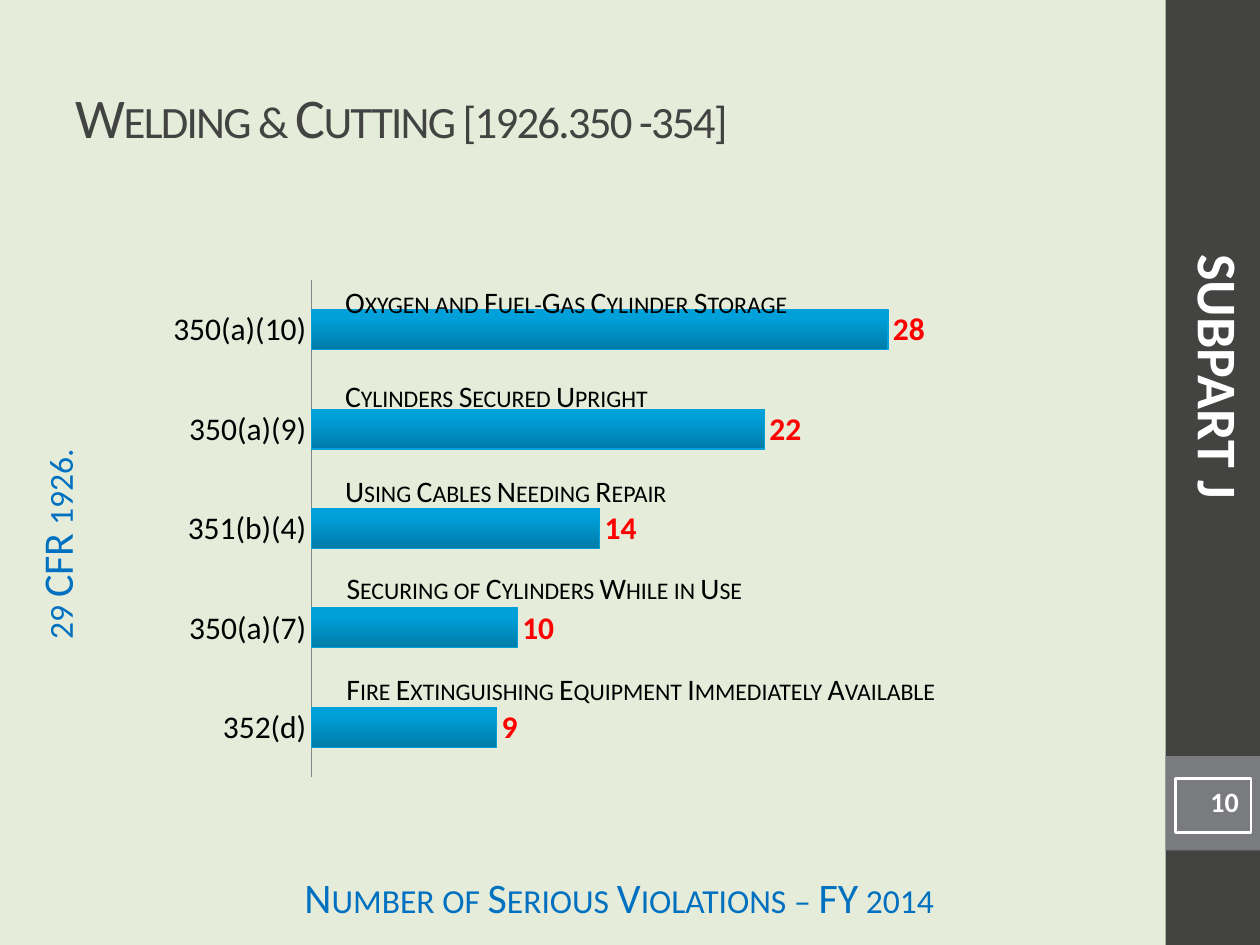
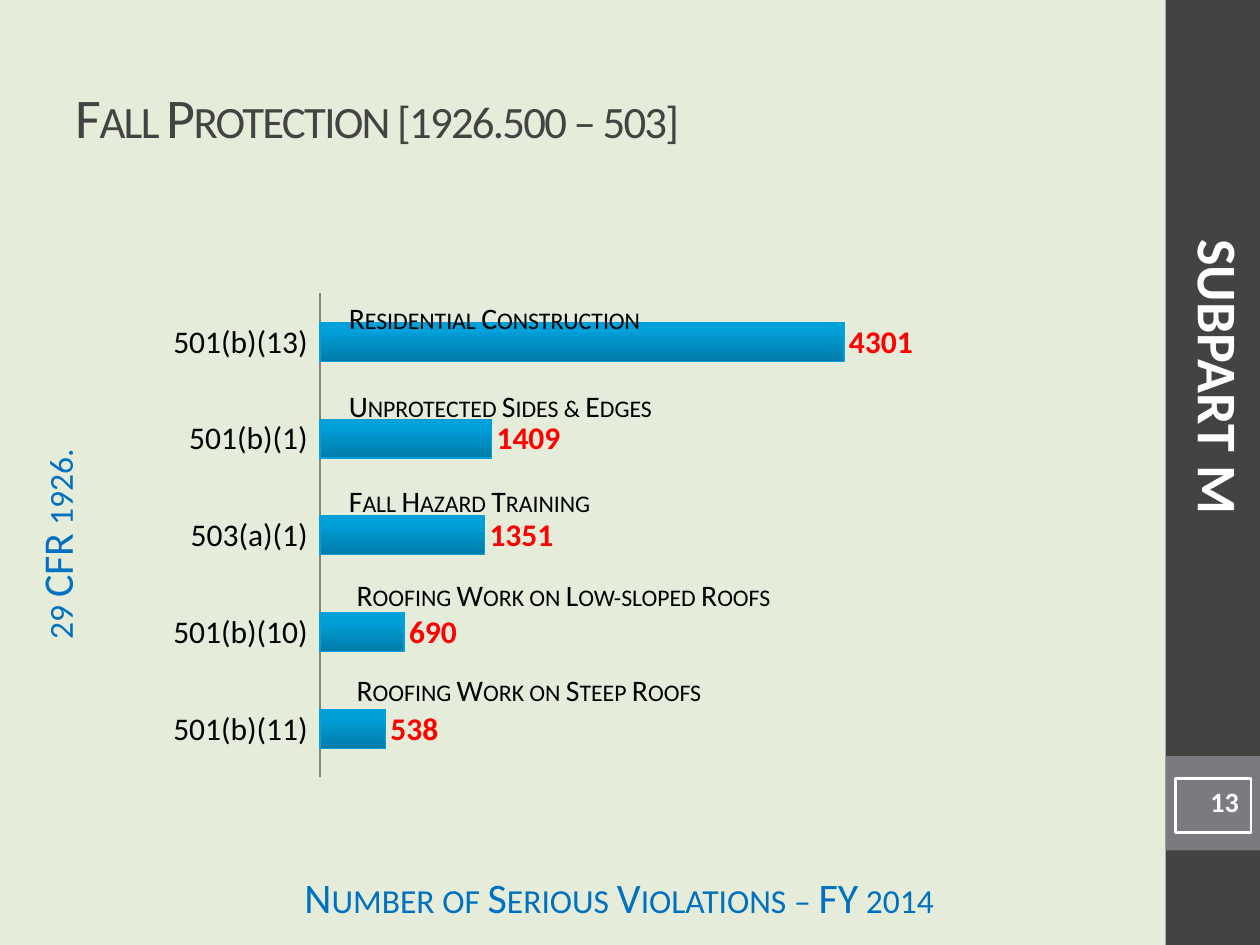
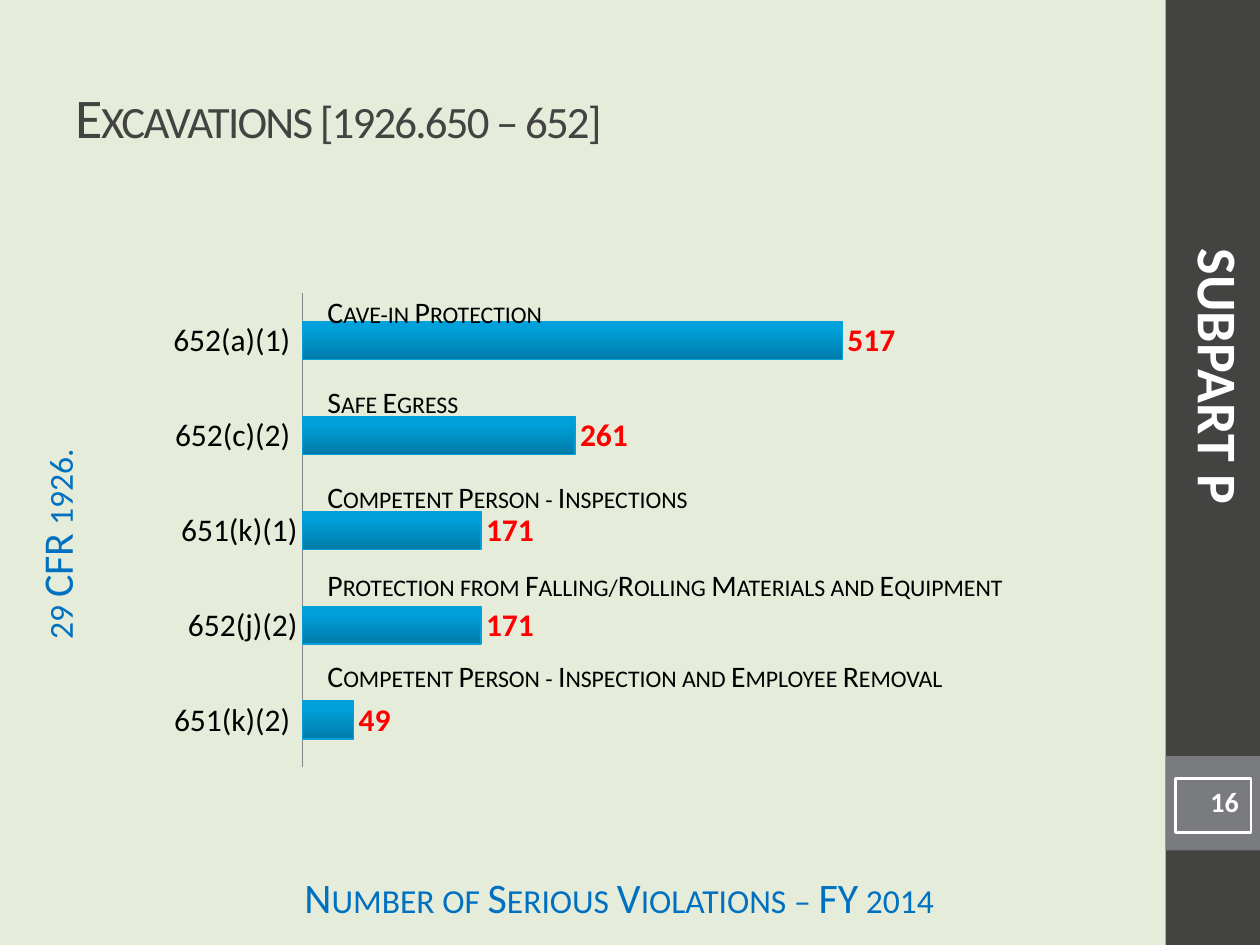
from copy import deepcopy
from dataclasses import dataclass

from pptx import Presentation, util as u
from pptx.chart import data as chart_data
from pptx.dml import color
from pptx.enum import chart as ch, shapes, text


@dataclass(frozen=True)
class Theme:
    font: str = "Calibri"
    page: str = "E5ECD9"
    band: str = "434342"
    tab: str = "797B7E"
    white: str = "FFFFFF"
    ink: str = "000000"
    note: str = "0070C0"
    count: str = "FF0000"
    axis: str = "868686"
    bar_edge: str = "03A0D9"
    bar_stops: tuple = ((0, "007BA8"), (0.8, "00A0DA"), (1, "00A0DB"))
    heading_size: int = 32
    note_size: int = 24
    chart_size: int = 18
    caption_size: int = 17
    number_size: int = 16


@dataclass(frozen=True)
class Box:
    left: float
    top: float
    width: float
    height: float

    def inner(self, dx, dy, width, height):
        return Box(self.left + dx, self.top + dy, width, height)

    def inches(self):
        return [u.Inches(round(n, 2)) for n in (self.left, self.top, self.width, self.height)]


@dataclass(frozen=True)
class Violation:
    citation: str
    count: int
    caption: str
    dx: float
    dy: float
    width: float
    height: float = 0.39
    tight: bool = False


@dataclass(frozen=True)
class Subpart:
    letter: str
    title: str
    number: int
    chart_box: Box
    axis_max: int
    violations: tuple


THEME = Theme()
TITLE_BOX = Box(0.5, 0.3, 8.33, 1.25)
BAND_BOX = Box(9.25, 0, 0.75, 7.5)
FOOTER_BOX = Box(2.08, 6.92, 5.67, 0.33)
CFR_BOX = Box(-1.56, 4.03, 4.19, 0.58)
NORMAL_INSETS = (0.1, 0.05, 0.1, 0.05)
NOTE_INSETS = (0.1, 0, 0.1, 0.05)
NO_INSETS = (0, 0, 0, 0)

SUBPARTS = (
    Subpart("J", "Welding & Cutting [1926.350 -354]", 10, Box(1.25, 2.14, 6.25, 4.11), 30, (
        Violation("350(a)(10)", 28, "Oxygen and Fuel-Gas Cylinder Storage", 1.39, 0.06, 3.78),
        Violation("350(a)(9)", 22, "Cylinders Secured Upright", 1.39, 0.81, 2.7),
        Violation("351(b)(4)", 14, "Using Cables Needing Repair", 1.39, 1.56, 2.81),
        Violation("350(a)(7)", 10, "Securing of Cylinders While in Use", 1.5, 2.38, 4.42, tight=True),
        Violation("352(d)", 9, "Fire Extinguishing Equipment Immediately Available",
                  1.5, 3.18, 5.34, 0.29, True),
    )),
    Subpart("M", "Fall Protection [1926.500 – 503]", 13, Box(1.25, 2.25, 6.25, 4), 5000, (
        Violation("501(b)(13) ", 4301, "Residential Construction", 1.42, 0.08, 2.56),
        Violation("501(b)(1) ", 1409, "Unprotected Sides & Edges", 1.42, 0.78, 2.7),
        Violation("503(a)(1) ", 1351, "Fall Hazard Training", 1.42, 1.53, 2.15),
        Violation("501(b)(10) ", 690, "Roofing Work on Low-sloped Roofs", 1.58, 2.33, 3.59, 0.26, True),
        Violation("501(b)(11) ", 538, "Roofing Work on Steep Roofs", 1.58, 3.08, 5.42, 0.29, True),
    )),
    Subpart("P", "Excavations [1926.650 – 652]", 16, Box(1.25, 2.25, 6.25, 3.92), 600, (
        Violation("652(a)(1) ", 517, "Cave-in Protection", 1.25, 0.03, 1.98),
        Violation("652(c)(2) ", 261, "Safe Egress", 1.25, 0.75, 1.28),
        Violation("651(k)(1)", 171, "Competent Person - Inspections", 1.25, 1.5, 3.14),
        Violation("652(j)(2)", 171, "Protection from Falling/Rolling Materials and Equipment",
                  1.25, 2.2, 5.65),
        Violation("651(k)(2) ", 49, "Competent Person - Inspection and Employee Removal",
                  1.25, 2.92, 5.22),
    )),
)


def rgb(value):
    return color.RGBColor.from_string(value)


def style_font(font, size, ink, bold=False):
    font.name = THEME.font
    font.size = u.Pt(size)
    font.bold = bold
    font.color.rgb = rgb(ink)


def write(frame, words, size, ink, bold=False, align=text.PP_ALIGN.LEFT, insets=NORMAL_INSETS,
          wrap=True, grow=False, anchor=text.MSO_ANCHOR.TOP, small_caps=False, spacing=None):
    frame.text = words
    frame.word_wrap = wrap
    frame.auto_size = text.MSO_AUTO_SIZE.SHAPE_TO_FIT_TEXT if grow else text.MSO_AUTO_SIZE.NONE
    frame.vertical_anchor = anchor
    (frame.margin_left, frame.margin_top,
     frame.margin_right, frame.margin_bottom) = map(u.Inches, insets)
    paragraph = frame.paragraphs[0]
    paragraph.alignment = align
    style_font(paragraph.font, size, ink, bold)
    if small_caps:
        paragraph.font._element.set("cap", "small")
    if spacing is not None:
        paragraph.font._element.set("spc", str(spacing))


def add_label(slide, box, words, size, ink, rotation=0, **options):
    label = slide.shapes.add_textbox(*box.inches())
    label.rotation = rotation
    write(label.text_frame, words, size, ink, **options)


def add_panel(slide, box, fill=None, edge=None):
    panel = slide.shapes.add_shape(shapes.MSO_SHAPE.RECTANGLE, *box.inches())
    panel.shadow.inherit = False
    if fill:
        panel.fill.solid()
        panel.fill.fore_color.rgb = rgb(fill)
    else:
        panel.fill.background()
    if edge:
        panel.line.color.rgb = rgb(edge)
        panel.line.width = u.Pt(1.5)
    else:
        panel.line.fill.background()
    return panel


def add_title(slide, box, words):
    title = slide.shapes.title
    title.left, title.top, title.width, title.height = box.inches()
    write(title.text_frame, words, THEME.heading_size, THEME.band,
          anchor=text.MSO_ANCHOR.MIDDLE, small_caps=True, spacing=-100)


def add_band(slide, box, subpart):
    add_panel(slide, box, fill=THEME.band)
    add_panel(slide, box.inner(0, 6, box.width, 0.75), fill=THEME.tab)
    number = add_panel(slide, box.inner(0.08, 6.18, 0.6, 0.43), edge=THEME.white)
    write(number.text_frame, str(subpart.number), THEME.number_size, THEME.white,
          bold=True, align=text.PP_ALIGN.RIGHT)
    add_label(slide, box.inner(-2.56, 2.67, 5.98, 0.64), f"SUBPART {subpart.letter}",
              THEME.heading_size, THEME.white, rotation=90, bold=True, grow=True,
              align=text.PP_ALIGN.CENTER)


def add_axis_notes(slide, footer_box, cfr_box):
    for box, words, rotation in (
        (footer_box, "Number of Serious Violations – FY 2014", 0),
        (cfr_box, "29 CFR 1926.", 270),
    ):
        add_label(slide, box, words, THEME.note_size, THEME.note, rotation,
                  align=text.PP_ALIGN.CENTER, insets=NOTE_INSETS, small_caps=True)


def style_bars(series):
    series.invert_if_negative = False
    fill = series.format.fill
    fill.gradient()
    fill.gradient_angle = 90
    stop_list = series._element.xpath(".//a:gsLst")[0]
    stop_list.append(deepcopy(stop_list[-1]))
    for stop, (position, shade) in zip(fill.gradient_stops, THEME.bar_stops):
        stop.position = position
        stop.color.rgb = rgb(shade)
    series.format.line.color.rgb = rgb(THEME.bar_edge)
    series.format.line.width = u.Pt(0.75)


def add_violation_chart(slide, box, subpart):
    bottom_up = subpart.violations[::-1]
    counts = chart_data.CategoryChartData()
    counts.categories = [violation.citation for violation in bottom_up]
    counts.add_series("Series 1", [violation.count for violation in bottom_up])
    chart = slide.shapes.add_chart(ch.XL_CHART_TYPE.BAR_CLUSTERED, *box.inches(), counts).chart
    chart.has_legend = False
    chart.has_title = False
    style_font(chart.font, 10, THEME.ink)

    citations = chart.category_axis
    citations.major_tick_mark = citations.minor_tick_mark = ch.XL_TICK_MARK.NONE
    citations.has_major_gridlines = False
    citations.format.line.color.rgb = rgb(THEME.axis)
    citations.format.line.width = u.Pt(0.75)
    style_font(citations.tick_labels.font, THEME.chart_size, THEME.ink)

    scale = chart.value_axis
    scale.minimum_scale, scale.maximum_scale = 0, subpart.axis_max
    scale.has_major_gridlines = False
    scale.visible = False

    bars = chart.plots[0]
    bars.vary_by_categories = False
    bars.gap_width = 150
    bars.overlap = -25
    bars.has_data_labels = True
    bars.data_labels.show_value = True
    bars.data_labels.position = ch.XL_LABEL_POSITION.OUTSIDE_END
    style_font(bars.data_labels.font, THEME.chart_size, THEME.count, bold=True)
    style_bars(bars.series[0])


def add_captions(slide, box, violations):
    for item in violations:
        add_label(slide, box.inner(item.dx, item.dy, item.width, item.height), item.caption,
                  THEME.caption_size, THEME.ink, small_caps=True, wrap=item.tight,
                  grow=not item.tight, insets=NO_INSETS if item.tight else NORMAL_INSETS)


def add_subpart_slide(deck, subpart):
    slide = deck.slides.add_slide(deck.slide_layouts[5])
    add_band(slide, BAND_BOX, subpart)
    add_axis_notes(slide, FOOTER_BOX, CFR_BOX)
    add_violation_chart(slide, subpart.chart_box, subpart)
    add_title(slide, TITLE_BOX, subpart.title)
    add_captions(slide, subpart.chart_box, subpart.violations)


def main():
    deck = Presentation()
    deck.slide_width, deck.slide_height = u.Inches(10), u.Inches(7.5)
    page = deck.slide_master.background.fill
    page.solid()
    page.fore_color.rgb = rgb(THEME.page)
    for subpart in SUBPARTS:
        add_subpart_slide(deck, subpart)
    deck.save("out.pptx")


if __name__ == "__main__":
    main()
